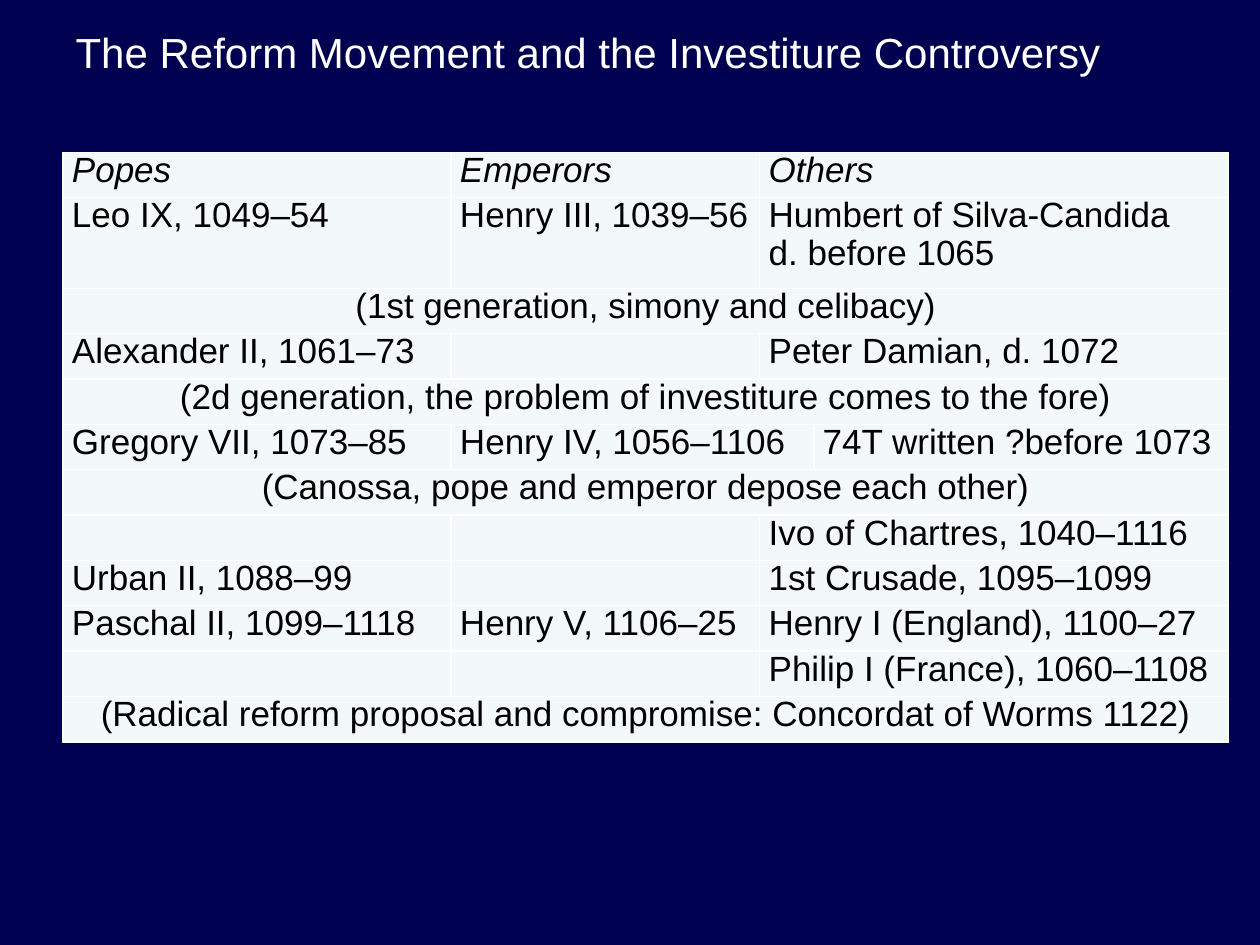
import pptx
import pptx.dml.color
import pptx.enum.text
import pptx.oxml
import pptx.oxml.ns
import pptx.util

Cm = pptx.util.Cm
Pt = pptx.util.Pt
RGBColor = pptx.dml.color.RGBColor
Align = pptx.enum.text.PP_ALIGN
Anchor = pptx.enum.text.MSO_ANCHOR

NAVY = RGBColor(0x00, 0x00, 0x50)
WHITE = RGBColor(0xFF, 0xFF, 0xFF)
BLACK = RGBColor(0x00, 0x00, 0x00)
PALE = RGBColor(0xF3, 0xF9, 0xFA)
FONT = "Arial"

COLUMN_WIDTHS = (7.82, 6.22, 1.09, 8.36)
BANNER = (0,)
STANDARD = (0, 1, 2)
WIDE_EMPEROR = (0, 1, 3)
ROWS = (
    (STANDARD, ("Popes", "Emperors", "Others")),
    (STANDARD, ("Leo IX, 1049–54", "Henry III, 1039–56",
                "Humbert of Silva-Candida\nd. before 1065")),
    (BANNER, ("(1st generation, simony and celibacy)",)),
    (STANDARD, ("Alexander II, 1061–73", "", "Peter Damian, d. 1072")),
    (BANNER, ("(2d generation, the problem of investiture comes to the fore)",)),
    (WIDE_EMPEROR, ("Gregory VII, 1073–85", "Henry IV, 1056–1106",
                    "74T written ?before 1073")),
    (BANNER, ("(Canossa, pope and emperor depose each other)",)),
    (STANDARD, ("", "", "Ivo of Chartres, 1040–1116")),
    (STANDARD, ("Urban II, 1088–99", "", "1st Crusade, 1095–1099")),
    (STANDARD, ("Paschal II, 1099–1118", "Henry V, 1106–25",
                "Henry I (England), 1100–27")),
    (STANDARD, ("", "", "Philip I (France), 1060–1108")),
    (BANNER, ("(Radical reform proposal and compromise: Concordat of Worms 1122)",)),
)


def add_text(paragraph, text, size, color, italic=False):
    for index, line in enumerate(text.split("\n")):
        if index:
            paragraph.add_line_break()
        run = paragraph.add_run()
        run.text = line
        run.font.name = FONT
        run.font.size = Pt(size)
        run.font.color.rgb = color
        run.font.italic = italic


def add_borders(cell, color, width):
    properties = cell._tc.get_or_add_tcPr()
    for side in ("lnL", "lnR", "lnT", "lnB"):
        properties.append(pptx.oxml.parse_xml(
            f'<a:{side} {pptx.oxml.ns.nsdecls("a")} w="{Pt(width)}">'
            f'<a:solidFill><a:srgbClr val="{color}"/></a:solidFill></a:{side}>'
        ))


def place_title(slide, left, top, width, height):
    title = slide.shapes.title
    title.left, title.top, title.width, title.height = left, top, width, height
    frame = title.text_frame
    frame.word_wrap = True
    frame.vertical_anchor = Anchor.TOP
    frame.margin_top = Cm(0.2)
    paragraph = frame.paragraphs[0]
    paragraph.alignment = Align.LEFT
    add_text(paragraph, "The Reform Movement and the Investiture Controversy", 24, WHITE)


def format_cell(cell):
    cell.margin_left = cell.margin_right = Cm(0.18)
    cell.margin_top = cell.margin_bottom = 0
    add_borders(cell, WHITE, 1)
    cell.fill.solid()
    cell.fill.fore_color.rgb = PALE


def place_timeline(slide, left, top, width, height):
    column_count = len(COLUMN_WIDTHS)
    table = slide.shapes.add_table(
        len(ROWS), column_count, left, top, width, height).table
    for column, share in zip(table.columns, COLUMN_WIDTHS):
        column.width = int(width * share / sum(COLUMN_WIDTHS))

    line_counts = [max(text.count("\n") + 1 for text in texts) for _, texts in ROWS]
    for row, line_count in zip(table.rows, line_counts):
        row.height = int(height * line_count / sum(line_counts))

    for cell in table.iter_cells():
        format_cell(cell)

    for row_index, (starts, texts) in enumerate(ROWS):
        ends = starts[1:] + (column_count,)
        for start, end, text in zip(starts, ends, texts):
            cell = table.cell(row_index, start)
            if end - start > 1:
                cell.merge(table.cell(row_index, end - 1))
            paragraph = cell.text_frame.paragraphs[0]
            paragraph.alignment = Align.CENTER if starts == BANNER else Align.LEFT
            paragraph.line_spacing = 0.96
            if text:
                add_text(paragraph, text, 20, BLACK, italic=row_index == 0)


def main():
    presentation = pptx.Presentation()
    presentation.slide_width = Cm(25.4)
    presentation.slide_height = Cm(19.05)
    slide = presentation.slides.add_slide(
        presentation.slide_layouts.get_by_name("Title Only"))
    slide.background.fill.solid()
    slide.background.fill.fore_color.rgb = NAVY
    place_title(slide, Cm(1.27), Cm(0.33), Cm(24.13), Cm(1.55))
    place_timeline(slide, Cm(1.27), Cm(3.07), Cm(23.5), Cm(11.89))
    presentation.save("out.pptx")


if __name__ == "__main__":
    main()
